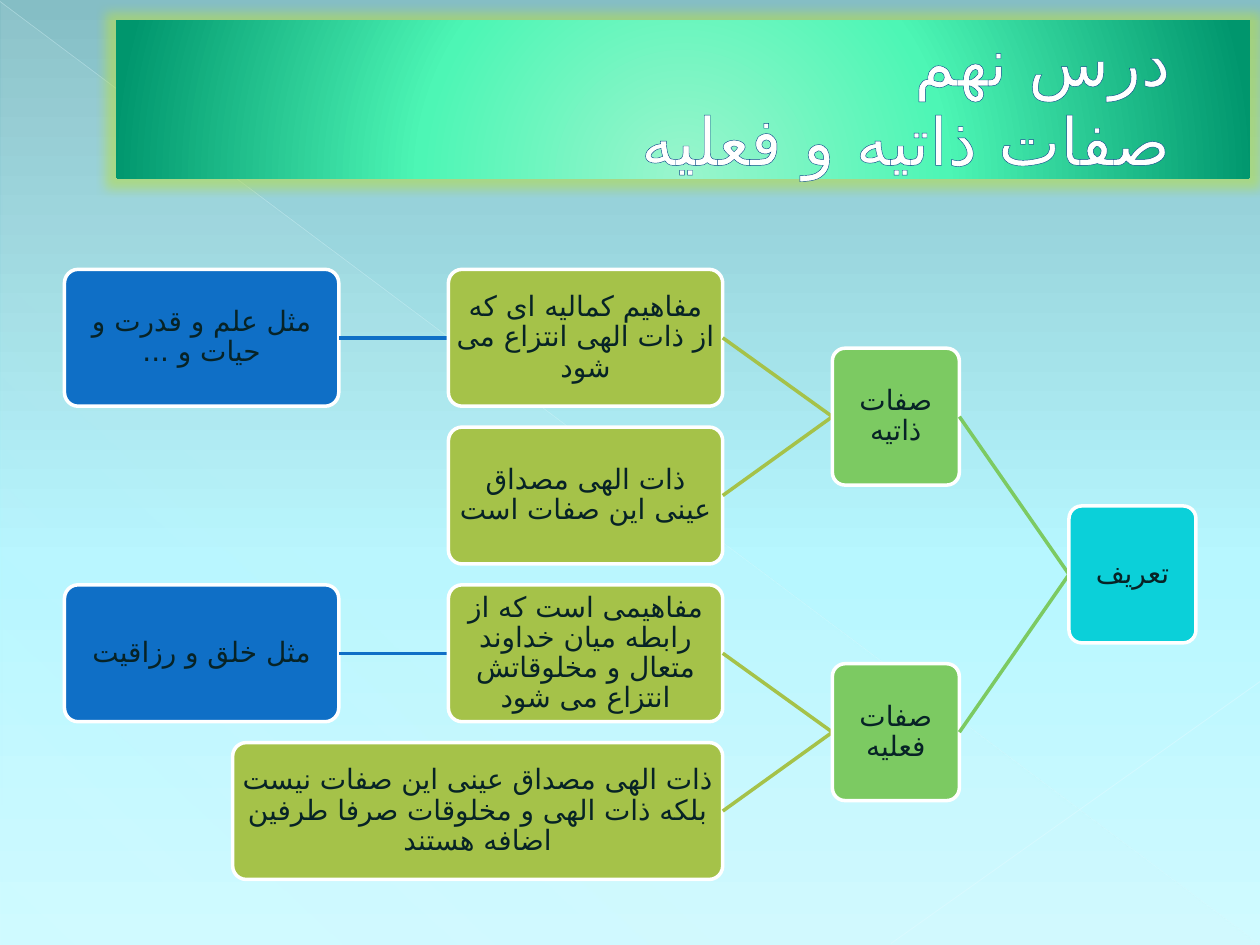
from dataclasses import dataclass

from lxml.etree import SubElement
from pptx import Presentation
from pptx.dml.color import RGBColor
from pptx.enum.shapes import MSO_CONNECTOR as Connector, MSO_SHAPE as Shape
from pptx.enum.text import MSO_ANCHOR as Anchor, MSO_AUTO_SIZE as AutoSize, PP_ALIGN as Align
from pptx.oxml import parse_xml
from pptx.oxml.ns import nsdecls, qn
from pptx.util import Cm, Pt


@dataclass(frozen=True)
class Theme:
    font: str = "TeX Gyre Adventor"
    arabic_font: str = "DejaVu Sans"
    title_size: float = 37.8
    box_size: float = 16
    white: str = "FFFFFF"
    ink: str = "072326"
    title_outline: str = "0A4D89"
    glow: str = "B4DC50"
    levels: tuple = ("0BD0D9", "7CCA62", "A5C249", "0F6FC6")
    sky: tuple = ((0, "85BEC5", 100), (60, "B7F7FF", 100), (100, "D0FAFF", 100))
    banner: tuple = ((0, "9AF5CD", 100), (46, "4DF6B5", 100), (100, "00966D", 100))
    veil: tuple = ((0, "DBF5F9", 10), (70, "DBF5F9", 8), (100, "DBF5F9", 1))


@dataclass
class Node:
    text: str
    children: tuple = ()
    width: float = 5.53

    def leaves(self):
        return sum(child.leaves() for child in self.children) or 1


# Tree layout in centimetres, growing from right to left
BOX_HEIGHT, ROW_STEP, COLUMN_GAP = 2.76, 3.18, 2.21
TREE_RIGHT, TREE_TOP = 24.11, 5.43
NARROW, WIDE = 2.56, 9.88


def add_color(parent, color, alpha=100):
    node = SubElement(parent, qn("a:srgbClr"), val=color)
    if alpha < 100:
        SubElement(node, qn("a:alpha"), val=str(alpha * 1000))


def set_gradient(fill, element, stops, angle=None, center=None):
    """Give an element a gradient that is linear, or circular around center."""
    fill.gradient()
    old = element.find(".//" + qn("a:gradFill"))
    gradient = parse_xml(f'<a:gradFill {nsdecls("a")} rotWithShape="1"><a:gsLst/></a:gradFill>')
    for position, color, alpha in stops:
        stop = SubElement(gradient[0], qn("a:gs"), pos=str(position * 1000))
        add_color(stop, color, alpha)
    if center:
        circle = SubElement(gradient, qn("a:path"), path="circle")
        sides = {side: str(value * 1000) for side, value in zip("ltrb", center)}
        SubElement(circle, qn("a:fillToRect"), **sides)
    else:
        SubElement(gradient, qn("a:lin"), ang=str(angle * 60000), scaled="0")
    old.getparent().replace(old, gradient)


def write(frame, text, *, font, arabic_font, size, color, align,
          spacing=None, indent=0, outline=None):
    """Write one right-to-left paragraph; a vertical tab breaks the line."""
    para = frame.paragraphs[0]
    para.text = text
    para.alignment = align
    if spacing:
        para.line_spacing = spacing
    properties = para._p.get_or_add_pPr()
    properties.set("rtl", "1")
    properties.set("marL", str(Cm(indent)))
    properties.set("indent", "0")
    for span in para.runs:
        span.font.name = font
        span.font.size = Pt(size)
        span.font.color.rgb = RGBColor.from_string(color)
        run_properties = span._r.get_or_add_rPr()
        run_properties.set("lang", "fa-IR")
        SubElement(run_properties, qn("a:cs"), typeface=arabic_font)
        if outline:
            run_properties.insert(0, parse_xml(
                f'<a:ln {nsdecls("a")} w="{Pt(0.5)}"><a:solidFill>'
                f'<a:srgbClr val="{outline}"/></a:solidFill></a:ln>'))


class Painter:
    def __init__(self, deck, theme):
        self.theme = theme
        self.page = deck.slides.add_slide(deck.slide_layouts[5])

    def background(self):
        set_gradient(self.page.background.fill, self.page.element, self.theme.sky, angle=90)

    def veil(self, left, top, width, height):
        triangle = self.page.shapes.add_shape(
            Shape.RIGHT_TRIANGLE, Cm(left), Cm(top), Cm(width), Cm(height))
        triangle.shadow.inherit = False
        triangle.line.fill.background()
        set_gradient(triangle.fill, triangle.element, self.theme.veil, angle=133)

    def line(self, start, end, color, width=2, alpha=100):
        line = self.page.shapes.add_connector(
            Connector.STRAIGHT, *(Cm(value) for value in (*start, *end)))
        line.line.width = Pt(width)
        line.line.color.rgb = RGBColor.from_string(color)
        if alpha < 100:
            shade = line.element.spPr.find(".//" + qn("a:srgbClr"))
            SubElement(shade, qn("a:alpha"), val=str(alpha * 1000))
        SubElement(line.element.spPr, qn("a:effectLst"))

    def title(self, text, left, top, width, height):
        theme, box = self.theme, self.page.shapes.title
        box.left, box.top, box.width, box.height = Cm(left), Cm(top), Cm(width), Cm(height)
        set_gradient(box.fill, box.element, theme.banner, center=(50, 155, 50, -55))
        box.shadow.inherit = False
        effects = box.element.spPr.find(qn("a:effectLst"))
        add_color(SubElement(effects, qn("a:glow"), rad=str(Pt(11))), theme.glow, 60)
        frame = box.text_frame
        frame.word_wrap, frame.auto_size = True, AutoSize.NONE
        frame.vertical_anchor = Anchor.MIDDLE
        write(frame, text, font=theme.font, arabic_font=theme.arabic_font,
              size=theme.title_size, color=theme.white,
              align=Align.RIGHT, indent=1.35, outline=theme.title_outline)
        # Bring the banner in front of the background decoration
        box.element.getparent().append(box.element)

    def box(self, text, left, top, width, color):
        theme = self.theme
        box = self.page.shapes.add_shape(
            Shape.ROUNDED_RECTANGLE, Cm(left), Cm(top), Cm(width), Cm(BOX_HEIGHT))
        box.adjustments[0] = 0.1
        box.shadow.inherit = False
        box.fill.solid()
        box.fill.fore_color.rgb = RGBColor.from_string(color)
        box.line.color.rgb = RGBColor.from_string(theme.white)
        box.line.width = Pt(2)
        frame = box.text_frame
        frame.word_wrap = True
        frame.vertical_anchor = Anchor.MIDDLE
        frame.margin_left = frame.margin_right = Cm(0.03)
        frame.margin_top = frame.margin_bottom = Cm(0.03)
        write(frame, text, font=theme.font, arabic_font=theme.arabic_font,
              size=theme.box_size, color=theme.ink, align=Align.CENTER, spacing=0.9)

    def tree(self, node, right=TREE_RIGHT, first_row=0, level=0):
        """Draw a node and its branches; return the height of its middle."""
        left, row, middles = right - node.width, first_row, []
        for child in node.children:
            middles.append(self.tree(child, left - COLUMN_GAP, row, level + 1))
            row += child.leaves()
        if middles:
            middle = (middles[0] + middles[-1]) / 2
        else:
            middle = TREE_TOP + first_row * ROW_STEP + BOX_HEIGHT / 2
        for end in middles:
            self.line((left, middle), (left - COLUMN_GAP, end), self.theme.levels[level + 1])
        self.box(node.text, left, middle - BOX_HEIGHT / 2, node.width, self.theme.levels[level])
        return middle


def main():
    deck = Presentation()
    deck.slide_width, deck.slide_height = Cm(25.4), Cm(19.05)
    painter = Painter(deck, Theme())

    # Background decoration
    painter.background()
    painter.veil(0.03, 0.05, 25.35, 19)
    painter.line((0, 0.03), (25.37, 19.02), "E2FCFF", 0.39, 35)
    painter.line((25.4, 13.74), (17.96, 19.02), "E5FCFF", 0.47, 45)

    # Title banner
    painter.title("درس نهم\vصفات ذاتیه و فعلیه", 2.34, 0.41, 22.86, 3.18)

    # Definition tree
    essence = Node("صفات ذاتیه", (
        Node("مفاهیم کمالیه ای که از ذات الهی انتزاع می شود",
             (Node("مثل علم و قدرت و حیات و ..."),)),
        Node("ذات الهی مصداق عینی این صفات است"),
    ), NARROW)
    action = Node("صفات فعلیه", (
        Node("مفاهیمی است که از رابطه میان خداوند متعال و مخلوقاتش انتزاع می شود",
             (Node("مثل خلق و رزاقیت"),)),
        Node("ذات الهی مصداق عینی این صفات نیست بلکه ذات الهی و مخلوقات صرفا طرفین اضافه هستند",
             width=WIDE),
    ), NARROW)
    painter.tree(Node("تعریف", (essence, action), NARROW))

    deck.save("out.pptx")


if __name__ == "__main__":
    main()
